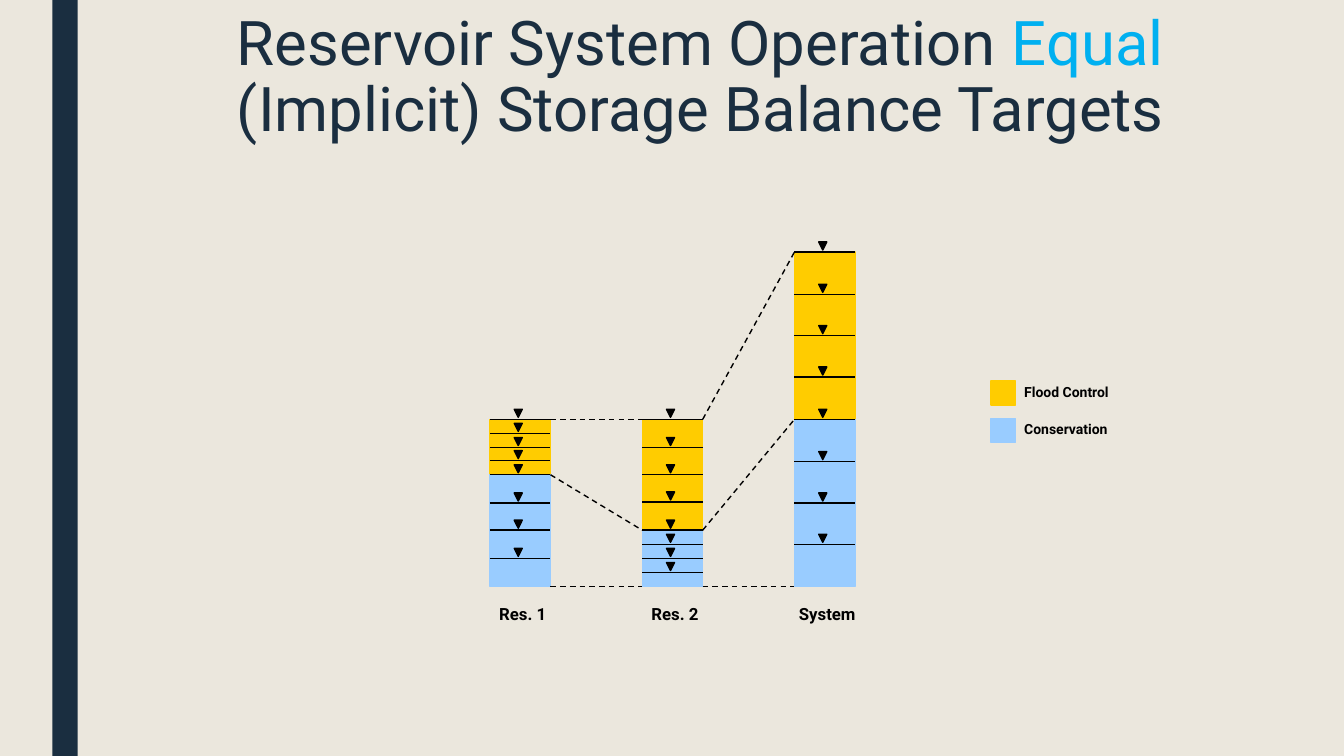
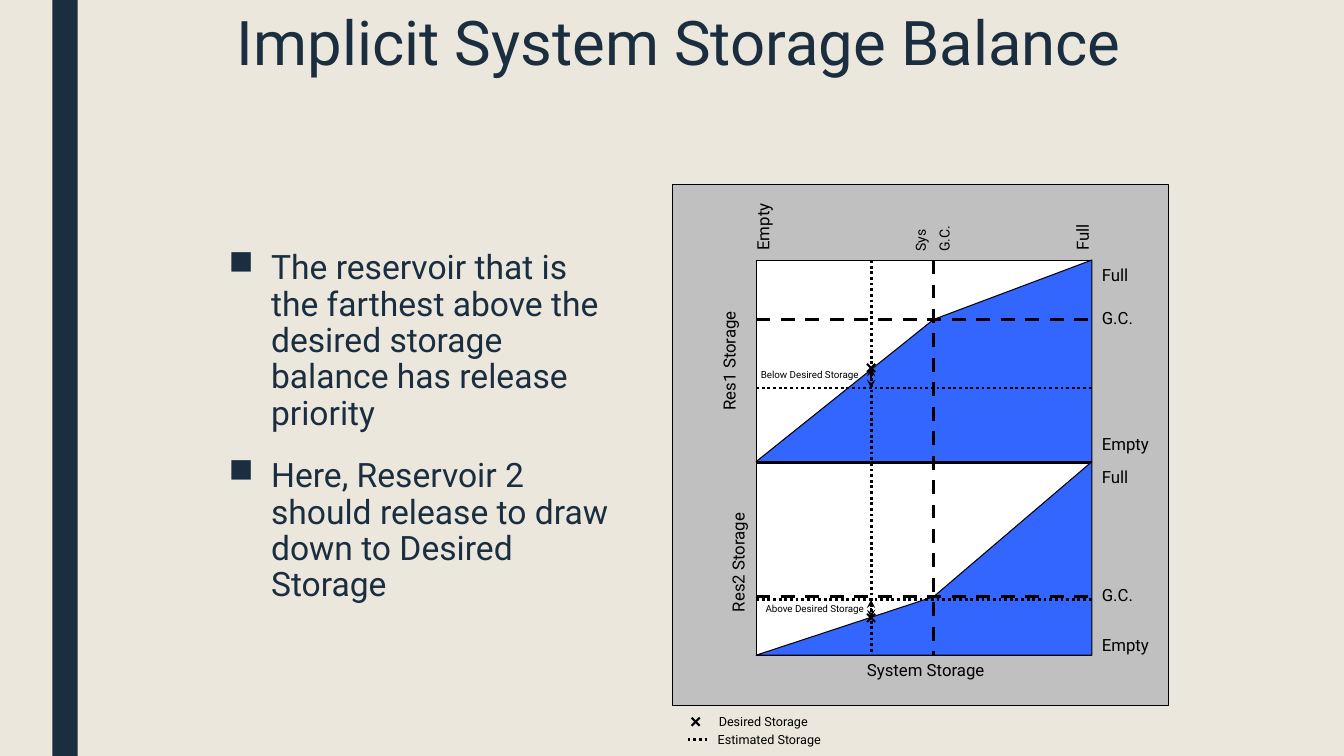
from dataclasses import dataclass

from lxml.etree import SubElement
from pptx import Presentation
from pptx.dml.color import RGBColor
from pptx.enum.dml import MSO_LINE
from pptx.enum.shapes import MSO_CONNECTOR, MSO_SHAPE
from pptx.enum.text import MSO_ANCHOR, PP_ALIGN
from pptx.oxml.ns import qn
from pptx.slide import Slide
from pptx.util import Emu, Pt

EMU_PER_PX = 9144
FONT = "Roboto"
PAPER, NAVY, SKY = "EBE7DD", "1A2E40", "00B0F0"
BLACK, WHITE, GRAY = "000000", "FFFFFF", "C0C0C0"
FLOOD, CONSERVATION, WATER = "FFCC00", "99CCFF", "3366FF"
TANK_W, TANK_BASE, ZONE_STEPS = 60, 582, 4
PLOT_L, PLOT_R, PLOT_T, PLOT_B = 750, 1083, 258, 650
GUIDE_X, NOW_X = 926, 864


@dataclass
class Tank:
    name: str
    x: int
    top: int
    split: int


@dataclass
class Label:
    text: str
    x: int
    y: int
    w: int
    h: int = 30
    size: int = 12
    turn: int = 0
    bold: bool = False
    align: PP_ALIGN = PP_ALIGN.LEFT


@dataclass
class Panel:
    top: int
    bottom: int
    guide: int
    estimate: int
    desired: int
    empty_y: int
    axis: Label
    note: Label


TANKS = [
    Tank("Res. 1", 486, 416, 471),
    Tank("Res. 2", 637, 416, 526),
    Tank("System", 788, 250, 416),
]

PANELS = [
    Panel(258, 458, 317, 385, 365, 425,
          Label("Res1 Storage", 648, 327, 150, turn=270),
          Label("Below Desired Storage", 737, 361, 132, 22, 7, align=PP_ALIGN.CENTER)),
    Panel(458, 650, 592, 595, 613, 625,
          Label("Res2 Storage", 657, 527, 150, turn=270),
          Label("Above Desired Storage", 739, 593, 138, 22, 7, align=PP_ALIGN.CENTER)),
]

PLOT_LABELS = [
    Label("System Storage", 850, 650, 150),
    Label("Empty", 723, 210, 67, turn=270),
    Label("Full", 1040, 210, 67, turn=270),
    Label("Sys\nG.C.", 892, 200, 67, 52, 10, turn=270),
    Label("Desired Storage", 689, 703, 136, 25, 9, align=PP_ALIGN.CENTER),
    Label("Estimated Storage", 695, 721, 136, 25, 9, align=PP_ALIGN.CENTER),
]

BULLETS = [
    "The reservoir that is the farthest above the desired storage balance has release priority",
    "Here, Reservoir 2 should release to draw down to Desired Storage",
]


def px(n: int) -> Emu:
    return Emu(n * EMU_PER_PX)


def rgb(color: str) -> RGBColor:
    return RGBColor.from_string(color)


def add_text(p, text: str, *, size: int = 12, color: str = BLACK,
             bold: bool = False, align: PP_ALIGN = PP_ALIGN.LEFT) -> None:
    p.alignment = align
    r = p.add_run()
    r.text = text
    r.font.name = FONT
    r.font.size = Pt(size)
    r.font.bold = bold
    r.font.color.rgb = rgb(color)


def paint(sp, fill: str, line: str, width: float) -> None:
    sp.shadow.inherit = False
    sp.fill.solid()
    sp.fill.fore_color.rgb = rgb(fill)
    sp.line.color.rgb = rgb(line)
    sp.line.width = Pt(width)


def add_box(s: Slide, x: int, y: int, w: int, h: int, fill: str, line: str,
            width: float = 1, kind: MSO_SHAPE = MSO_SHAPE.RECTANGLE):
    sp = s.shapes.add_shape(kind, px(x), px(y), px(w), px(h))
    paint(sp, fill, line, width)
    return sp


def add_line(s: Slide, x1: int, y1: int, x2: int, y2: int, width: float = 1,
             dash: MSO_LINE | None = None, arrows: bool = False) -> None:
    sp = s.shapes.add_connector(MSO_CONNECTOR.STRAIGHT, px(x1), px(y1), px(x2), px(y2))
    sp.line.color.rgb = rgb(BLACK)
    sp.line.width = Pt(width)
    if dash is not None:
        sp.line.dash_style = dash
    if arrows:
        ln = sp.line._get_or_add_ln()
        for end in ("a:headEnd", "a:tailEnd"):
            SubElement(ln, qn(end), type="stealth")
    SubElement(sp.element.spPr, qn("a:effectLst"))


def add_label(s: Slide, label: Label) -> None:
    sp = s.shapes.add_textbox(px(label.x), px(label.y), px(label.w), px(label.h))
    sp.rotation = label.turn
    tf = sp.text_frame
    tf.word_wrap = True
    for i, text in enumerate(label.text.split("\n")):
        p = tf.add_paragraph() if i else tf.paragraphs[0]
        p.space_before = Pt(label.size / 2)
        add_text(p, text, size=label.size, bold=label.bold, align=label.align)


def add_cross(s: Slide, x: int, y: int) -> None:
    for rise in (-4, 4):
        add_line(s, x - 4, y - rise, x + 4, y + rise, 1.5)


def add_title_slide(prs, *parts: tuple[str, str]) -> Slide:
    s = prs.slides.add_slide(prs.slide_layouts[5])
    title = s.shapes.title
    title.left, title.top, title.width, title.height = px(225), px(8), px(1075), px(119)
    tf = title.text_frame
    tf.word_wrap = True
    tf.vertical_anchor = MSO_ANCHOR.TOP
    p = tf.paragraphs[0]
    p.line_spacing = 0.89
    for text, color in parts:
        add_text(p, text, size=44, color=color)
    return s


def add_level(s: Slide, x: int, y: int) -> None:
    add_line(s, x, y, x + TANK_W, y)
    mark = add_box(s, x + 24, y - 10, 8, 8, BLACK, BLACK, kind=MSO_SHAPE.ISOSCELES_TRIANGLE)
    mark.rotation = 180


def add_tank(s: Slide, tank: Tank) -> None:
    zones = [(tank.top, tank.split, FLOOD), (tank.split, TANK_BASE, CONSERVATION)]
    for top, bottom, color in zones:
        add_box(s, tank.x, top, TANK_W, bottom - top, color, color)
    for top, bottom, _ in zones:
        for i in range(ZONE_STEPS):
            add_level(s, tank.x, round(top + (bottom - top) * i / ZONE_STEPS))
    add_label(s, Label(tank.name, tank.x - 15, 594, 95, bold=True, align=PP_ALIGN.CENTER))


def build_tanks(prs) -> Slide:
    s = add_title_slide(prs, ("Reservoir System Operation ", NAVY), ("Equal", SKY),
                        (" (Implicit) Storage Balance Targets", NAVY))
    for tank in TANKS:
        add_tank(s, tank)
    for a, b in zip(TANKS, TANKS[1:]):
        for y1, y2 in ((a.top, b.top), (a.split, b.split), (TANK_BASE, TANK_BASE)):
            add_line(s, a.x + TANK_W, y1, b.x, y2, dash=MSO_LINE.DASH)
    for i, (text, color) in enumerate([("Flood Control", FLOOD), ("Conservation", CONSERVATION)]):
        add_box(s, 983, 378 + 37 * i, 24, 24, color, color)
        add_label(s, Label(text, 1006, 376 + 36 * i, 131, 27, 10, bold=True))
    return s


def add_bullets(s: Slide) -> None:
    tf = s.shapes.add_textbox(px(217), px(244), px(408), px(423)).text_frame
    tf.word_wrap = True
    for i, text in enumerate(BULLETS):
        p = tf.add_paragraph() if i else tf.paragraphs[0]
        p.line_spacing = 0.9
        p.space_before, p.space_after = Pt(17), Pt(2)
        add_text(p, text, size=24, color=NAVY)
        pPr = p._p.get_or_add_pPr()
        pPr.set("marL", str(px(42)))
        pPr.set("indent", str(px(-42)))
        SubElement(pPr, qn("a:buChar"), char="■")


def add_panel(s: Slide, panel: Panel) -> None:
    outline = s.shapes.build_freeform(PLOT_L, panel.bottom, scale=EMU_PER_PX)
    outline.add_line_segments(
        [(GUIDE_X, panel.guide), (PLOT_R, panel.top), (PLOT_R, panel.bottom)], close=True)
    paint(outline.convert_to_shape(), WATER, BLACK, 0.75)
    add_line(s, PLOT_L, panel.guide, PLOT_R, panel.guide, 2.5, MSO_LINE.DASH)
    add_line(s, PLOT_L, panel.estimate, PLOT_R, panel.estimate, 2, MSO_LINE.ROUND_DOT)
    add_line(s, NOW_X, panel.desired, NOW_X, panel.estimate, 1.5, arrows=True)
    add_cross(s, NOW_X, panel.desired)
    sides = [("Full", panel.top), ("G.C.", panel.guide - 17), ("Empty", panel.empty_y)]
    for text, y in sides:
        add_label(s, Label(text, PLOT_R, y, 67))
    add_label(s, panel.axis)
    add_label(s, panel.note)


def build_balance(prs) -> Slide:
    s = add_title_slide(prs, ("Implicit System Storage Balance", NAVY))
    add_bullets(s)
    add_box(s, 667, 183, 492, 517, GRAY, BLACK, 0.75)
    add_box(s, PLOT_L, PLOT_T, PLOT_R - PLOT_L, PLOT_B - PLOT_T, WHITE, BLACK, 0.75)
    add_line(s, PLOT_L, 458, PLOT_R, 458, 3)
    for panel in PANELS:
        add_panel(s, panel)
    add_line(s, GUIDE_X, PLOT_T, GUIDE_X, PLOT_B, 2.5, MSO_LINE.DASH)
    add_line(s, NOW_X, PLOT_T, NOW_X, PLOT_B, 2, MSO_LINE.ROUND_DOT)
    for label in PLOT_LABELS:
        add_label(s, label)
    add_cross(s, 690, 716)
    add_line(s, 682, 734, 702, 734, 2, MSO_LINE.ROUND_DOT)
    return s


def main() -> None:
    prs = Presentation()
    prs.slide_width, prs.slide_height = px(1333), px(750)
    fill = prs.slide_master.background.fill
    fill.solid()
    fill.fore_color.rgb = rgb(PAPER)
    s = build_tanks(prs)
    build_balance(prs)
    band = add_box(s, 52, 0, 25, 750, NAVY, NAVY)
    band.line.fill.background()
    s.slide_layout.shapes.element.append(band.element)
    prs.save("out.pptx")


if __name__ == "__main__":
    main()
